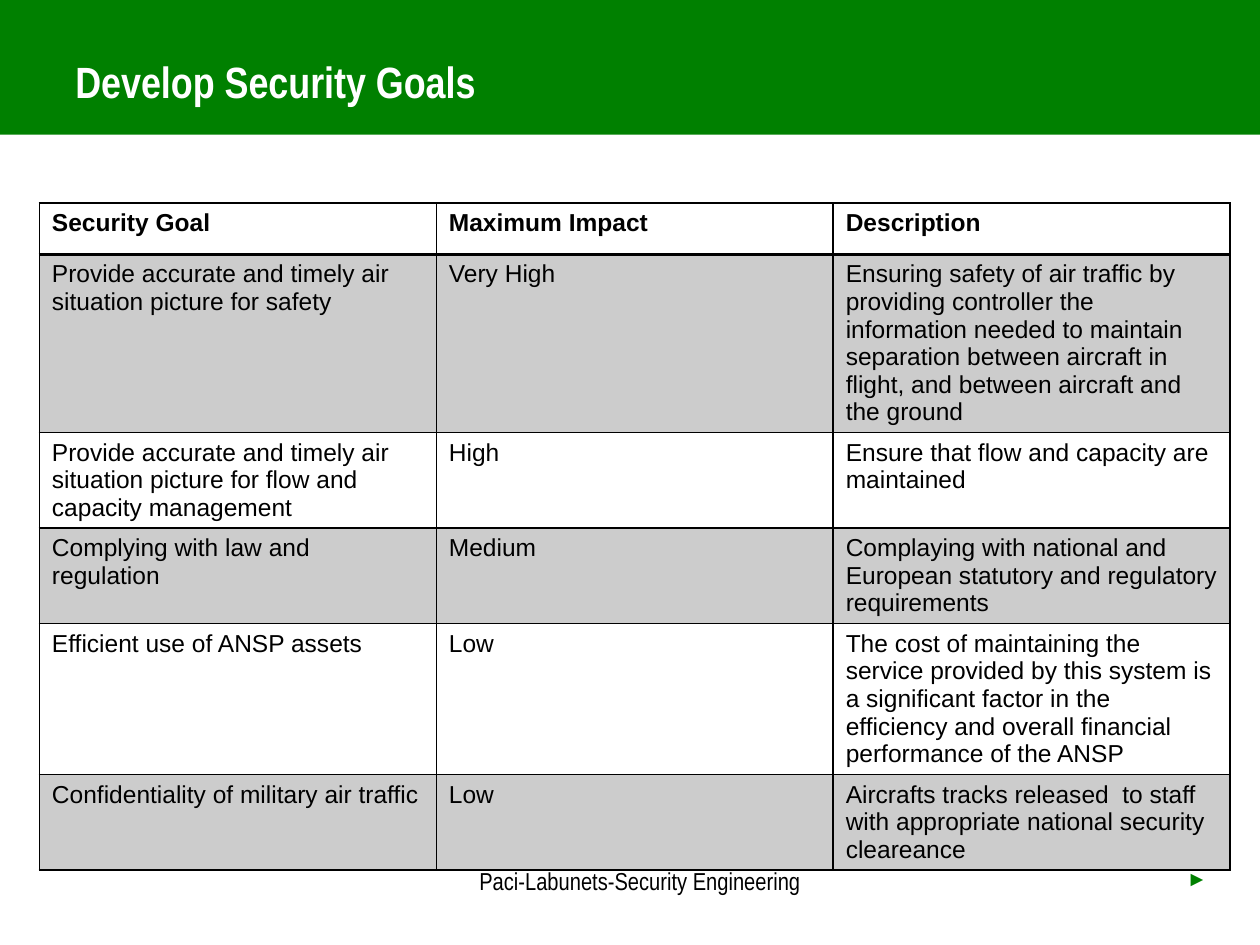
"""Build the Develop Security Goals slide with its table of goals."""
import lxml.etree
import pptx
import pptx.dml.color
import pptx.enum.shapes
import pptx.enum.text
import pptx.oxml.ns
import pptx.util

Pt = pptx.util.Pt
ALIGN = pptx.enum.text.PP_ALIGN
ANCHOR = pptx.enum.text.MSO_ANCHOR


def color(value):
    return pptx.dml.color.RGBColor.from_string(value)


def write(frame, text, size, font_name, font_color, bold=False, align=ALIGN.LEFT):
    frame.word_wrap = True
    para = frame.paragraphs[0]
    para.text = text
    para.alignment = align
    para.font.size = Pt(size)
    para.font.name = font_name
    para.font.bold = bold
    para.font.color.rgb = color(font_color)


deck = pptx.Presentation()
deck.slide_width, deck.slide_height = Pt(720), Pt(540)
page = deck.slides.add_slide(deck.slide_layouts[6])

band = page.shapes.add_shape(
    pptx.enum.shapes.MSO_SHAPE.RECTANGLE, Pt(0), Pt(-2), Pt(720), Pt(79)
)
band.shadow.inherit = False
band.fill.solid()
band.fill.fore_color.rgb = color("008000")
band.line.fill.background()

title = page.shapes.add_textbox(Pt(36), Pt(21.6), Pt(477.4), Pt(49.7)).text_frame
title.vertical_anchor = ANCHOR.MIDDLE
write(title, "Develop Security Goals", 25, "Arial Narrow", "FFFFFF", bold=True)

goals = [
    ("Security Goal", "Maximum Impact", "Description"),
    (
        "Provide accurate and timely air situation picture for safety",
        "Very High",
        "Ensuring safety of air traffic by providing controller the information needed "
        "to maintain separation between aircraft in flight, and between aircraft and the ground",
    ),
    (
        "Provide accurate and timely air situation picture for flow and capacity management",
        "High",
        "Ensure that flow and capacity are maintained",
    ),
    (
        "Complying with law and regulation",
        "Medium",
        "Complaying with national and European statutory and regulatory requirements",
    ),
    (
        "Efficient use of ANSP assets",
        "Low",
        "The cost of maintaining the service provided by this system is a significant "
        "factor in the efficiency and overall financial performance of the ANSP",
    ),
    (
        "Confidentiality of military air traffic",
        "Low",
        "Aircrafts tracks released  to staff with appropriate national security cleareance",
    ),
]
row_height = 29.2

table = page.shapes.add_table(
    len(goals), 3, Pt(22.5), Pt(116), Pt(680.4), Pt(row_height * len(goals))
).table
table.horz_banding = False
for column in table.columns:
    column.width = Pt(226.8)

for row_index, goal in enumerate(goals):
    table.rows[row_index].height = Pt(row_height)
    for column_index, text in enumerate(goal):
        cell = table.cell(row_index, column_index)
        write(cell.text_frame, text, 14, "Arial", "000000", bold=row_index == 0)
        cell.text_frame.paragraphs[0].line_spacing = Pt(15.8)
        properties = cell._tc.get_or_add_tcPr()
        for side in "LRTB":
            thick = (row_index, side) in ((0, "B"), (1, "T"))
            line = lxml.etree.SubElement(
                properties, pptx.oxml.ns.qn(f"a:ln{side}"), w=str(Pt(2 if thick else 1))
            )
            fill = lxml.etree.SubElement(line, pptx.oxml.ns.qn("a:solidFill"))
            lxml.etree.SubElement(fill, pptx.oxml.ns.qn("a:srgbClr"), val="000000")
        if row_index % 2:
            cell.fill.solid()
            cell.fill.fore_color.rgb = color("CCCCCC")
        else:
            cell.fill.background()

footer = page.shapes.add_textbox(Pt(190), Pt(491.4), Pt(351.4), Pt(36)).text_frame
write(footer, "Paci-Labunets-Security Engineering", 14, "Arial Narrow", "000000", align=ALIGN.CENTER)

marker = page.shapes.add_textbox(Pt(626.4), Pt(491), Pt(76.3), Pt(36)).text_frame
marker.margin_right = Pt(12.7)
write(marker, "►", 12, "Arial Narrow", "008000", align=ALIGN.RIGHT)

deck.save("out.pptx")
